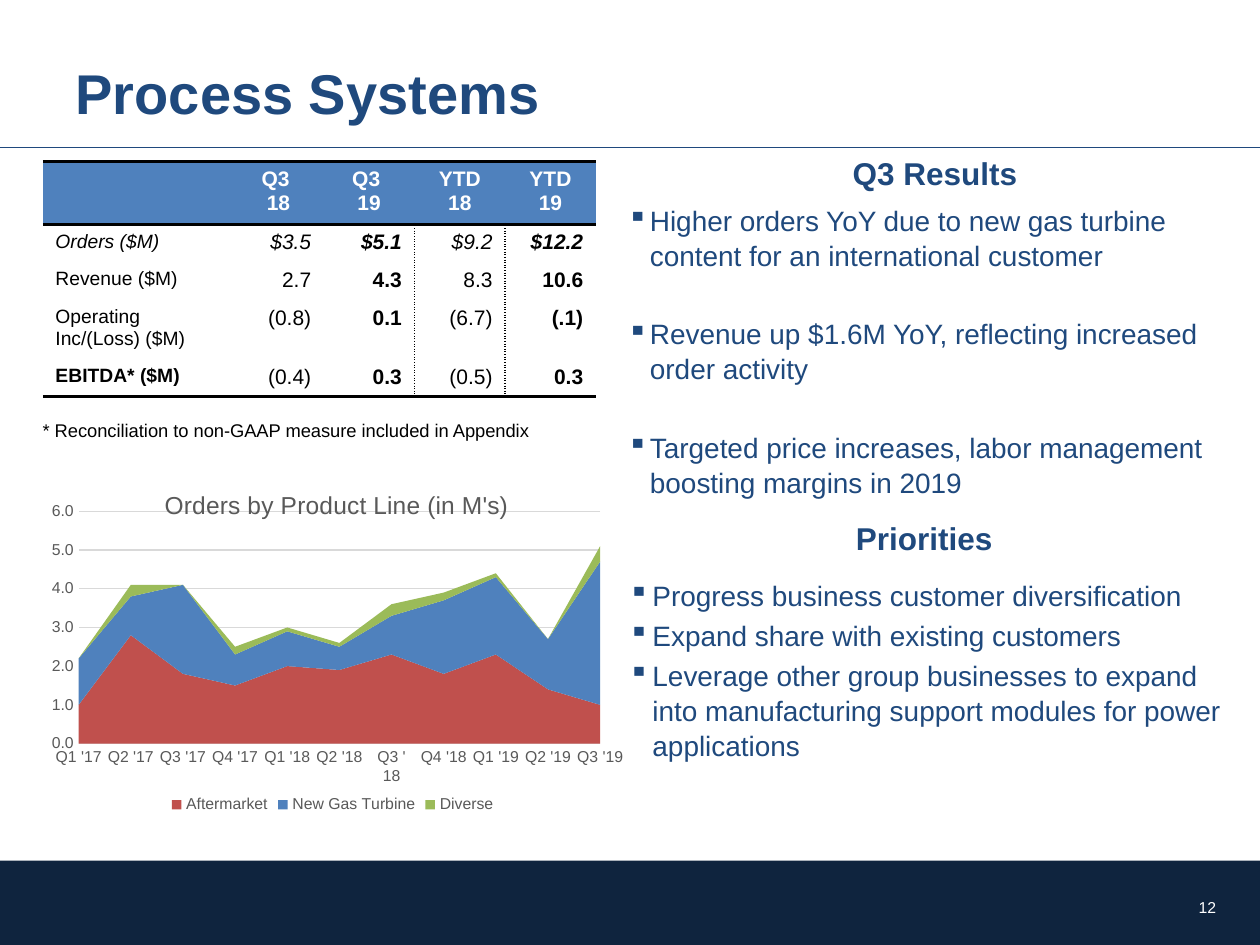
from lxml.etree import SubElement
from pptx import Presentation
from pptx.chart.data import CategoryChartData
from pptx.dml.color import RGBColor
from pptx.enum.chart import XL_CHART_TYPE as Chart, XL_LEGEND_POSITION as Legend, XL_TICK_MARK as Tick
from pptx.enum.shapes import MSO_CONNECTOR as Connector, MSO_SHAPE as Shape
from pptx.enum.text import MSO_ANCHOR as Anchor, PP_ALIGN as Align
from pptx.oxml.ns import qn
from pptx.util import Pt

SCALE = 9144  # EMU per px, 100 px to the inch
NAVY, BLUE, DARK = "1F497D", "4F81BD", "0F243E"
BLACK, WHITE, GREY, PALE = "000000", "FFFFFF", "595959", "D9D9D9"
NO_STYLE = "{2D5ABB26-0587-4C30-8999-92F81FD0307C}"

HEADINGS = ["", "Q3 \n18", "Q3 \n19", "YTD 18", "YTD 19"]
RESULTS = [
    ("Orders ($M)", "$3.5", "$5.1", "$9.2", "$12.2"),
    ("Revenue ($M)", "2.7", "4.3", "8.3", "10.6"),
    ("Operating Inc/(Loss) ($M)", "(0.8)", "0.1", "(6.7)", "(.1)"),
    ("EBITDA* ($M)", "(0.4)", "0.3", "(0.5)", "0.3"),
]
QUARTERS = ["Q1 '17", "Q2 '17", "Q3 '17", "Q4 '17", "Q1 '18", "Q2 '18",
            "Q3 ' 18", "Q4 '18", "Q1 '19", "Q2 '19", "Q3 '19"]
ORDERS = [
    ("Aftermarket", "C0504D", (1, 2.8, 1.8, 1.5, 2, 1.9, 2.3, 1.8, 2.3, 1.4, 1)),
    ("New Gas Turbine", BLUE, (1.2, 1, 2.3, 0.8, 0.9, 0.6, 1, 1.9, 2, 1.3, 3.7)),
    ("Diverse", "9BBB59", (0, 0.3, 0, 0.2, 0.1, 0.1, 0.3, 0.2, 0.1, 0, 0.4)),
]
Q3_RESULTS = [
    "Higher orders YoY due to new gas turbine content for an international customer",
    "Revenue up $1.6M YoY, reflecting increased order activity",
    "Targeted price increases, labor management boosting margins in 2019",
]
PRIORITIES = [
    "Progress business customer diversification",
    "Expand share with existing customers",
    "Leverage other group businesses to expand into manufacturing support modules for power applications",
]


def px(*lengths):
    return [length * SCALE for length in lengths]


def color(value):
    return RGBColor.from_string(value)


def style(font, size, ink, **formats):
    values = {"name": "Arial", "size": Pt(size), "bold": False, **formats}
    for name, value in values.items():
        setattr(font, name, value)
    font.color.rgb = color(ink)


def write(para, text, size, ink, align=Align.LEFT, **formats):
    para.alignment = align
    para.text = text
    style(para.font, size, ink, **formats)


def add_text(page, box, anchor=Anchor.TOP):
    frame = page.shapes.add_textbox(*px(*box)).text_frame
    frame.word_wrap = True
    frame.vertical_anchor = anchor
    return frame


def bullet(para, text, indent, after):
    props = para._p.get_or_add_pPr()
    props.set("marL", str(indent * SCALE))
    props.set("indent", str(-indent * SCALE))
    SubElement(props, qn("a:buChar"), char="▪")
    write(para, text, 16, NAVY)
    para.line_spacing = 1.04
    para.space_after = Pt(after)


def add_frame(page, title):
    # Footer band, header rule, title and page number
    band = page.shapes.add_shape(Shape.RECTANGLE, *px(0, 683, 1000, 67))
    band.shadow.inherit = False
    band.fill.solid()
    band.fill.fore_color.rgb = color(DARK)
    band.line.fill.background()
    rule = page.shapes.add_connector(Connector.STRAIGHT, *px(0, 117, 1000, 117))
    rule.line.color.rgb = color(NAVY)
    rule.line.width = Pt(0.75)
    SubElement(rule._element.spPr, qn("a:effectLst"))
    holder = page.shapes.title
    holder.left, holder.top, holder.width, holder.height = px(50, 30, 900, 87)
    holder.text_frame.vertical_anchor = Anchor.MIDDLE
    write(holder.text_frame.paragraphs[0], title, 32, NAVY, bold=True)
    number = add_text(page, (925, 700, 50, 40), Anchor.MIDDLE)
    write(number.paragraphs[0], "12", 9, WHITE, Align.RIGHT)


def border(cell, side, width, dash="solid"):
    line = SubElement(cell._tc.get_or_add_tcPr(), qn(f"a:ln{side}"), w=str(Pt(width)))
    SubElement(SubElement(line, qn("a:solidFill")), qn("a:srgbClr"), val=BLACK)
    SubElement(line, qn("a:prstDash"), val=dash)


def fill_cell(cell, text, row, col):
    header, last = row == 0, row == len(RESULTS)
    # Borders come in the order left, right, top, bottom
    if not header and col in (3, 4):
        border(cell, "L", 1, "sysDot")
    if not header and col in (2, 3):
        border(cell, "R", 1, "sysDot")
    if header:
        border(cell, "T", 2)
    if header or last:
        border(cell, "B", 2)
    cell.fill.solid()
    cell.fill.fore_color.rgb = color(BLUE if header else WHITE)
    frame = cell.text_frame
    for index, line in enumerate(text.split("\n")):
        para = frame.add_paragraph() if index else frame.paragraphs[0]
        if header:
            write(para, line, 12, WHITE, Align.CENTER, bold=True)
        elif col == 0:
            write(para, line, 11, BLACK, bold=last, italic=row == 1)
        else:
            write(para, line, 12, BLACK, Align.RIGHT, bold=col in (2, 4), italic=row == 1)


def add_results_table(page, box):
    rows = [HEADINGS, *RESULTS]
    table = page.shapes.add_table(len(rows), len(HEADINGS), *px(*box)).table
    table.first_row = table.horz_banding = False
    table._tbl.tblPr.find(qn("a:tableStyleId")).text = NO_STYLE
    for column, width in zip(table.columns, px(151, 72, 72, 72, 72)):
        column.width = width
    for row, height in zip(table.rows, px(46, 28, 28, 43, 28)):
        row.height = height
    for r, texts in enumerate(rows):
        for c, text in enumerate(texts):
            fill_cell(table.cell(r, c), text, r, c)


def set_layout(parent, position, **places):
    for old in parent.findall(qn("c:layout")):
        parent.remove(old)
    layout = parent.makeelement(qn("c:layout"))
    parent.insert(position, layout)
    manual = SubElement(layout, qn("c:manualLayout"))
    for tag, value in places.items():
        SubElement(manual, qn(f"c:{tag}"), val=str(value))


def add_orders_chart(page, box):
    data = CategoryChartData(number_format="#,##0.0")
    data.categories = QUARTERS
    for name, _, values in ORDERS:
        data.add_series(name, values)
    chart = page.shapes.add_chart(Chart.AREA_STACKED, *px(*box), data).chart
    style(chart.font, 10, BLACK)
    plot = chart.plots[0]
    plot.vary_by_categories = False
    for series, (_, ink, _) in zip(plot.series, ORDERS):
        series.format.fill.solid()
        series.format.fill.fore_color.rgb = color(ink)
    # Title over the plot
    chart.has_title = True
    write(chart.chart_title.text_frame.paragraphs[0], "Orders by Product Line (in M's)",
          14, GREY, Align.CENTER)
    chart.chart_title.include_in_layout = False
    set_layout(chart.chart_title._element, 1, xMode="edge", yMode="edge", x=0.21, y=0.05)
    set_layout(chart._chartSpace.chart.plotArea, 0, layoutTarget="inner", xMode="edge",
               yMode="edge", x=0.073, y=0.125, w=0.877, h=0.661)
    # Axes and legend
    months, amounts = chart.category_axis, chart.value_axis
    for axis in (months, amounts):
        axis.major_tick_mark = axis.minor_tick_mark = Tick.NONE
        style(axis.tick_labels.font, 9, GREY)
    months.has_major_gridlines = False
    amounts.has_major_gridlines = True
    for line in (months.format.line, amounts.major_gridlines.format.line):
        line.color.rgb = color(PALE)
        line.width = Pt(0.75)
    amounts.format.line.fill.background()
    amounts.minimum_scale, amounts.maximum_scale, amounts.major_unit = 0, 6, 1
    amounts.tick_labels.number_format = "#,##0.0"
    amounts.tick_labels.number_format_is_linked = False
    chart.has_legend = True
    chart.legend.position = Legend.BOTTOM
    chart.legend.include_in_layout = False
    style(chart.legend.font, 9, GREY)


def add_comments(page, left, top):
    # Results heading with its bullets
    results = add_text(page, (left, top, 508, 290))
    write(results.paragraphs[0], "Q3 Results", 18, NAVY, Align.CENTER, bold=True)
    results.paragraphs[0].space_after = Pt(6)
    for text in Q3_RESULTS:
        bullet(results.add_paragraph(), text, 18, 25)
    # Priorities heading with its bullets
    heading = add_text(page, (left + 1, top + 290, 489, 40))
    write(heading.paragraphs[0], "Priorities", 18, NAVY, Align.CENTER, bold=True)
    priorities = add_text(page, (left + 1, top + 336, 507, 184))
    for index, text in enumerate(PRIORITIES):
        para = priorities.add_paragraph() if index else priorities.paragraphs[0]
        bullet(para, text, 19, 3)


def main():
    deck = Presentation()
    deck.slide_width, deck.slide_height = px(1000, 750)
    page = deck.slides.add_slide(deck.slide_layouts[5])
    add_frame(page, "Process Systems")
    add_results_table(page, (34, 128, 439, 173))
    note = add_text(page, (24, 328, 583, 29))
    write(note.paragraphs[0], "* Reconciliation to non-GAAP measure included in Appendix", 10.5, BLACK)
    add_orders_chart(page, (28, 371, 472, 279))
    add_comments(page, 488, 117)
    deck.save("out.pptx")


if __name__ == "__main__":
    main()
